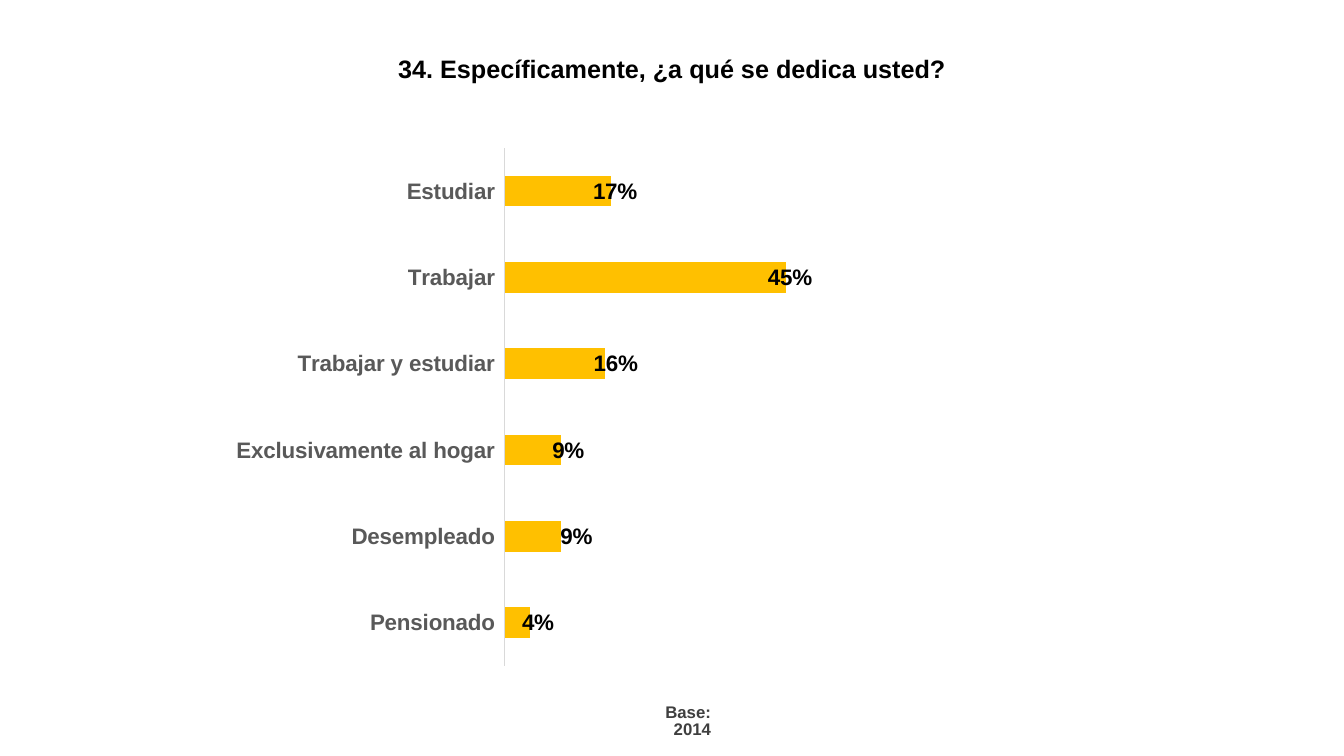
from lxml import etree
from pptx import Presentation
from pptx.chart.data import CategoryChartData
from pptx.dml.color import RGBColor
from pptx.enum.chart import XL_CHART_TYPE, XL_LABEL_POSITION, XL_TICK_LABEL_POSITION, XL_TICK_MARK
from pptx.enum.text import MSO_ANCHOR, PP_ALIGN
from pptx.oxml import parse_xml
from pptx.oxml.ns import nsdecls
from pptx.util import Pt

BAR = XL_CHART_TYPE.BAR_CLUSTERED
INSIDE_END = XL_LABEL_POSITION.INSIDE_END
LABELS_LOW = XL_TICK_LABEL_POSITION.LOW
NO_TICK = XL_TICK_MARK.NONE
MIDDLE, TOP = MSO_ANCHOR.MIDDLE, MSO_ANCHOR.TOP
CENTER, RIGHT = PP_ALIGN.CENTER, PP_ALIGN.RIGHT
SCALE = 914400 / 100.8


def px(*lengths):
    return [round(n * SCALE) for n in lengths]


def style(font, size, color):
    for name, value in {"name": "Arial", "size": Pt(size), "bold": True}.items():
        setattr(font, name, value)
    font.color.rgb = RGBColor.from_string(color)


prs = Presentation()
prs.slide_width, prs.slide_height = px(1344, 756)
s = prs.slides.add_slide(prs.slide_layouts[6])

texts = [
    ("34. Específicamente, ¿a qué se dedica usted?", (67, 31, 1210, 75), 18, "000000", MIDDLE, CENTER, 1.0),
    ("Base: 2014", (624, 700, 97, 25), 12, "3F3F3F", TOP, RIGHT, 0.83),
]
for text, box, size, color, anchor, align, spacing in texts:
    tf = s.shapes.add_textbox(*px(*box)).text_frame
    tf.word_wrap = True
    tf.vertical_anchor = anchor
    p = tf.paragraphs[0]
    p.alignment = align
    p.line_spacing = spacing
    r = p.add_run()
    r.text = text
    style(r.font, size, color)

activities = [
    ("Pensionado", 0.04, 28),
    ("Desempleado", 0.09, 35),
    ("Exclusivamente al hogar", 0.09, 27),
    ("Trabajar y estudiar", 0.16, 37),
    ("Trabajar", 0.45, 30),
    ("Estudiar", 0.17, 30),
]
data = CategoryChartData(number_format="0%")
data.categories = [name for name, _, _ in activities]
data.add_series("Series 1", [value for _, value, _ in activities])

chart_width, chart_height = 924, 539
chart = s.shapes.add_chart(BAR, *px(224, 138, chart_width, chart_height), data).chart
chart.has_legend = False
chart.has_title = False
chart.font.name = "Arial"
chart.font.size = Pt(10)
chart.font.color.rgb = RGBColor.from_string("000000")

plot_box = {
    "x": 281 / chart_width,
    "y": 10 / chart_height,
    "w": 625 / chart_width,
    "h": 518 / chart_height,
}
modes = '<c:layoutTarget val="inner"/><c:xMode val="edge"/><c:yMode val="edge"/>'
sizes = "".join(f'<c:{key} val="{value:.4f}"/>' for key, value in plot_box.items())
layout = parse_xml(f'<c:layout {nsdecls("c")}><c:manualLayout>{modes}{sizes}</c:manualLayout></c:layout>')
plot_area = chart.element.xpath("c:chart/c:plotArea")[0]
for old in plot_area.xpath("c:layout"):
    plot_area.remove(old)
plot_area.insert(0, layout)

cat_axis = chart.category_axis
cat_axis.major_tick_mark = NO_TICK
cat_axis.minor_tick_mark = NO_TICK
cat_axis.tick_label_position = LABELS_LOW
cat_axis.has_major_gridlines = False
style(cat_axis.tick_labels.font, 16, "595959")
cat_axis.format.line.color.rgb = RGBColor.from_string("D9D9D9")
cat_axis.format.line.width = Pt(0.75)

val_axis = chart.value_axis
val_axis.minimum_scale, val_axis.maximum_scale = 0, 1
val_axis.has_major_gridlines = False
val_axis.visible = False

plot = chart.plots[0]
plot.gap_width = 182
plot.vary_by_categories = False
series = plot.series[0]
series.invert_if_negative = False
series.format.fill.solid()
series.format.fill.fore_color.rgb = RGBColor.from_string("FFC000")

labels = series.data_labels
labels.show_value = True
labels.number_format = "0%"
labels.number_format_is_linked = False
labels.position = INSIDE_END
style(labels.font, 16, "000000")

for i, (_, _, shift) in enumerate(activities):
    label = series.points[i].data_label
    style(label.font, 16, "000000")
    label.position = INSIDE_END
    idx = series._element.xpath(f"c:dLbls/c:dLbl/c:idx[@val='{i}']")[0]
    offset = etree.fromstring(
        f'<c:layout {nsdecls("c")}><c:manualLayout><c:x val="{shift / chart_width:.4f}"/>'
        '<c:y val="0"/></c:manualLayout></c:layout>'
    )
    idx.addnext(offset)

prs.save("out.pptx")
